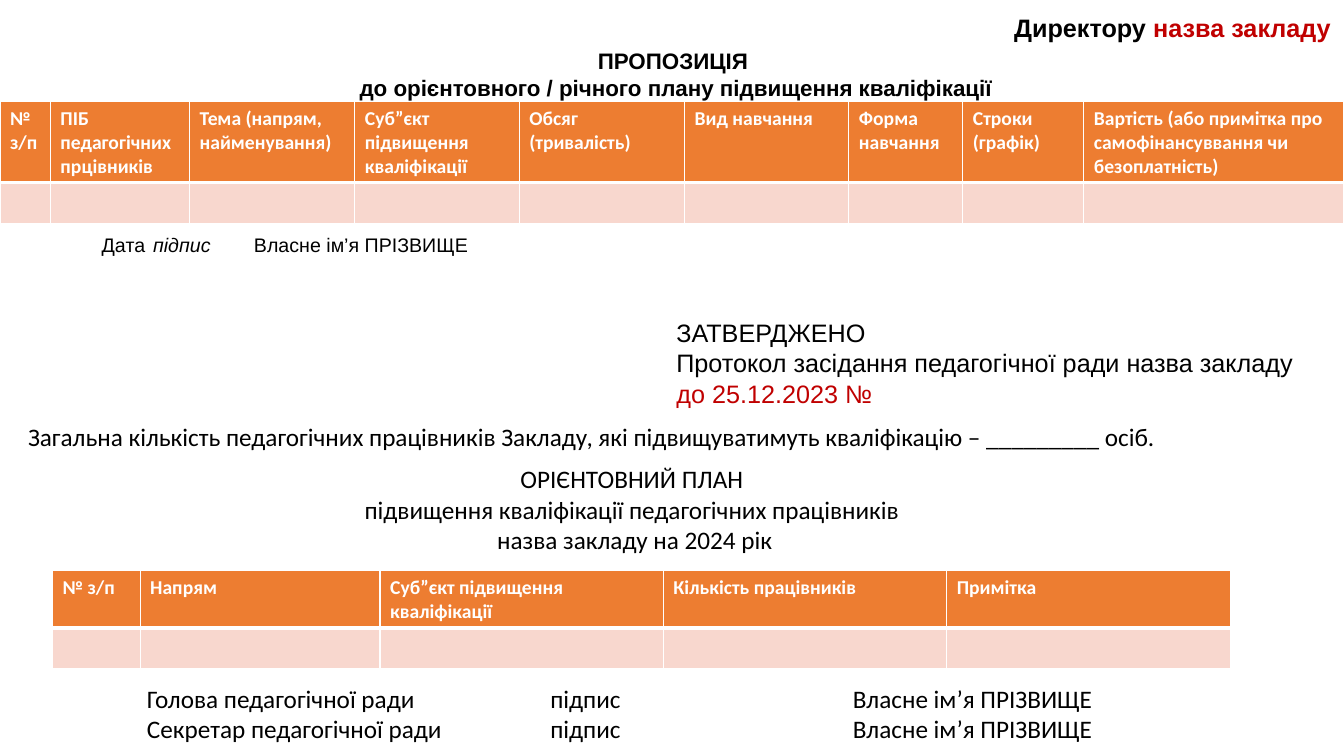
from lxml import etree
from pptx import Presentation, util as u
from pptx.dml.color import RGBColor
from pptx.enum import text
from pptx.oxml.ns import qn

PX = 9144  # 100 px to the inch
BLACK, RED, WHITE = "000000", "C00000", "FFFFFF"
ORANGE, PINK = "ED7D31", "F8D7CE"


def px(length):
    return u.Emu(length * PX)


def rgb(value):
    return RGBColor.from_string(value)


def style(run, font, size, color=BLACK, bold=False, italic=False):
    run.font.name = font
    run.font.size = u.Pt(size)
    run.font.bold = bold
    run.font.italic = italic
    run.font.color.rgb = rgb(color)


def add_text(slide, box, lines, font, size, bold=False, centered=False,
             indent=0, tabs=(), wrap=True):
    """Each line is a string or a list of (text, run options) pairs."""
    frame = slide.shapes.add_textbox(*map(px, box)).text_frame
    frame.word_wrap = wrap
    for number, line in enumerate(lines):
        paragraph = frame.paragraphs[0] if number == 0 else frame.add_paragraph()
        properties = paragraph._p.get_or_add_pPr()
        if indent:
            properties.set("marL", "0")
            properties.set("indent", str(px(indent)))
        if tabs:
            stops = etree.SubElement(properties, qn("a:tabLst"))
            for tab in tabs:
                etree.SubElement(stops, qn("a:tab"), pos=str(px(tab)), algn="l")
        if centered:
            paragraph.alignment = text.PP_ALIGN.CENTER
        for words, options in [(line, {})] if isinstance(line, str) else line:
            run = paragraph.add_run()
            run.text = words
            style(run, font, size, **{"bold": bold, **options})
    return frame


def set_borders(cell, bottom):
    properties = cell._tc.get_or_add_tcPr()
    for side, width in (("L", 1), ("R", 1), ("T", 1), ("B", bottom)):
        line = etree.SubElement(properties, qn(f"a:ln{side}"), w=str(u.Pt(width)))
        fill = etree.SubElement(line, qn("a:solidFill"))
        etree.SubElement(fill, qn("a:srgbClr"), val=WHITE)


def add_form_table(slide, left, top, columns, heights):
    """Header row over one empty row; columns are (heading, width) pairs."""
    width = sum(size for _, size in columns)
    table = slide.shapes.add_table(2, len(columns), px(left), px(top),
                                   px(width), px(sum(heights))).table
    table.horz_banding = False
    for row, height in zip(table.rows, heights):
        row.height = px(height)
    for index, (heading, size) in enumerate(columns):
        table.columns[index].width = px(size)
        header, blank = table.cell(0, index), table.cell(1, index)
        header.text = heading
        for run in (r for p in header.text_frame.paragraphs for r in p.runs):
            style(run, "Calibri", 14, WHITE, bold=True)
        for cell, color, bottom in ((header, ORANGE, 3), (blank, PINK, 1)):
            set_borders(cell, bottom)
            cell.fill.solid()
            cell.fill.fore_color.rgb = rgb(color)


def add_proposal(slide, left, top):
    add_text(slide, (left + 996, top + 7, 338, 40),
             [[("Директору ", {}), ("назва закладу", {"color": RED})]],
             "Arial", 18, bold=True, wrap=False)
    add_text(slide, (left + 52, top + 42, 1188, 91),
             ["ПРОПОЗИЦІЯ ",
              "до орієнтовного / річного плану підвищення кваліфікації"],
             "Arial", 16, bold=True, centered=True, indent=49)
    add_form_table(slide, left, top + 101, [
        ("№ з/п", 50),
        ("ПІБ педагогічних\vпрцівників", 138),
        ("Тема (напрям, найменування)", 164),
        ("Суб”єкт підвищення кваліфікації", 163),
        ("Обсяг (тривалість)", 164),
        ("Вид навчання", 163),
        ("Форма навчання", 113),
        ("Строки (графік)", 120),
        ("Вартість (або примітка про самофінансуввання чи безоплатність)", 258),
    ], (80, 41))
    signature = add_text(
        slide, (left + 42, top + 226, 1258, 34),
        [[("Дата\t", {}), ("підпис\t", {"italic": True}),
          ("Власне ім’я ПРІЗВИЩЕ", {})]],
        "Arial", 14, indent=49, tabs=(500, 800))
    signature.vertical_anchor = text.MSO_ANCHOR.MIDDLE


def add_plan(slide, left, top):
    add_text(slide, (left + 661, top, 667, 101),
             ["ЗАТВЕРДЖЕНО",
              "Протокол засідання педагогічної ради назва закладу",
              [("до 25.12.2023 №", {"color": RED})]], "Arial", 18)
    add_text(slide, (left + 18, top + 103, 1323, 40),
             ["Загальна кількість педагогічних працівників Закладу, "
              "які підвищуватимуть кваліфікацію – _________ осіб."],
             "Calibri", 18)
    add_text(slide, (left + 9, top + 145, 1241, 101),
             ["ОРІЄНТОВНИЙ ПЛАН ",
              "підвищення кваліфікації педагогічних працівників ",
              "назва закладу на 2024 рік"], "Calibri", 18, centered=True)
    add_form_table(slide, left + 52, top + 256, [
        ("№ з/п", 87),
        ("Напрям", 238),
        ("Суб”єкт підвищення кваліфікації", 281),
        ("Кількість працівників", 281),
        ("Примітка", 282),
    ], (56, 41))
    add_text(slide, (left + 136, top + 363, 1070, 71),
             [f"{role} педагогічної ради\tпідпис\tВласне ім’я ПРІЗВИЩЕ"
              for role in ("Голова", "Секретар")],
             "Calibri", 18, tabs=(400, 700))


def main():
    presentation = Presentation()
    presentation.slide_width, presentation.slide_height = px(1333), px(750)
    slide = presentation.slides.add_slide(presentation.slide_layouts[6])
    add_proposal(slide, 0, 0)
    add_plan(slide, 0, 310)
    presentation.save("out.pptx")


if __name__ == "__main__":
    main()
